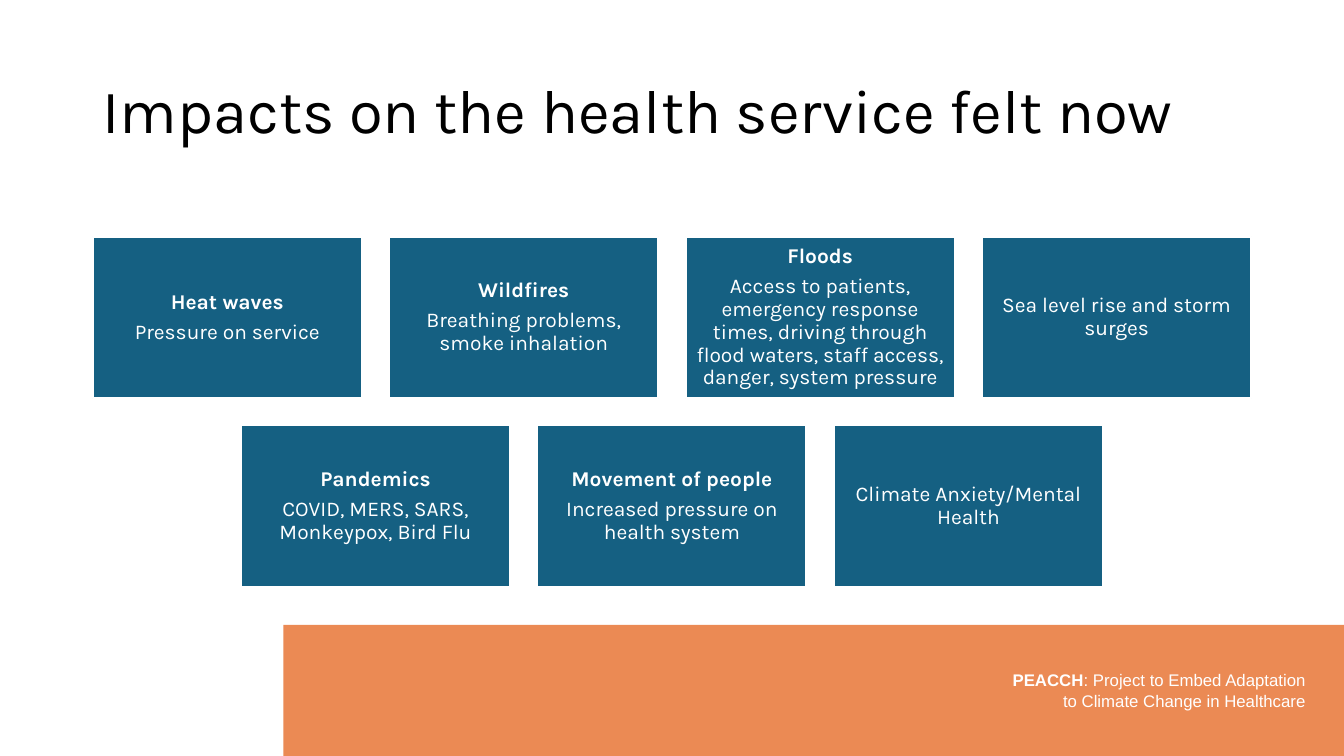
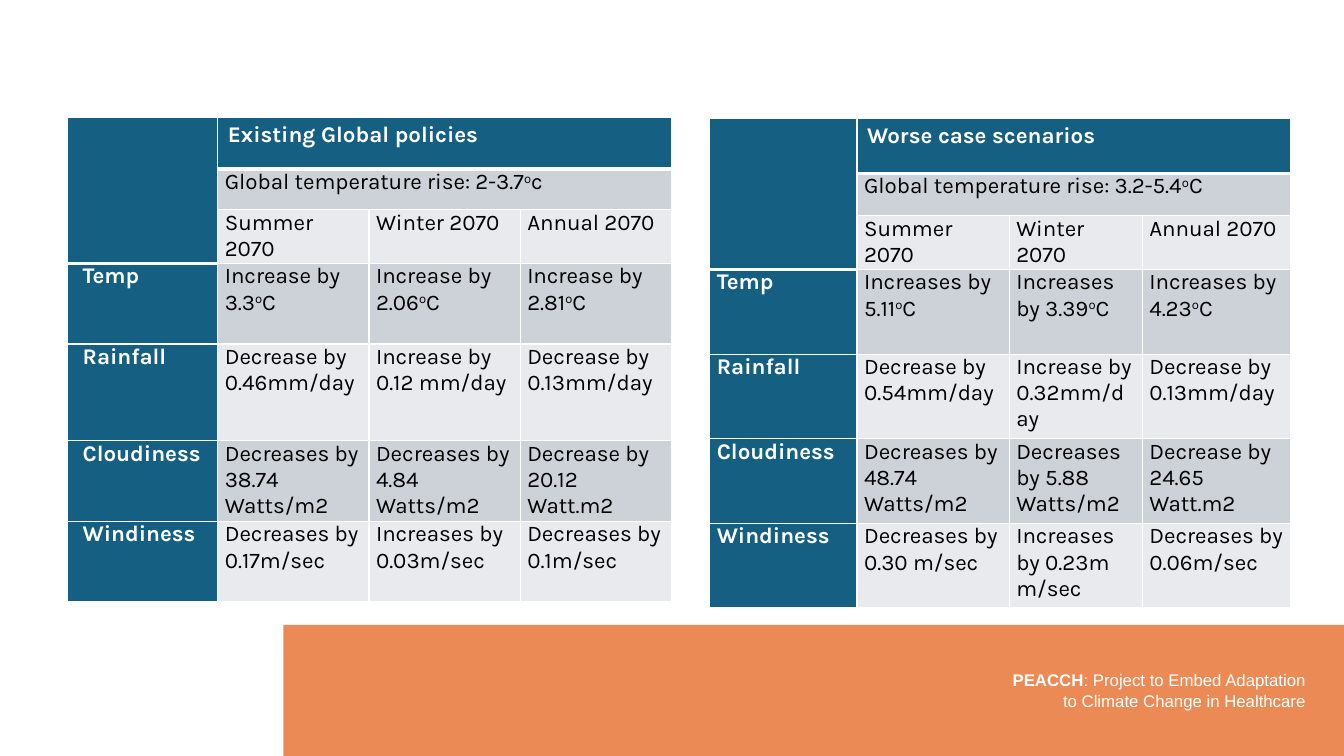
from lxml import etree
from pptx import Presentation
from pptx import util as u
from pptx.dml.color import RGBColor
from pptx.enum import shapes, text
from pptx.oxml.ns import qn

PX = 9144  # EMU per px, 100 px to the inch
WIDE, HIGH = 1333, 750
BLUE, ORANGE, WHITE, BLACK = "156082", "EB8A54", "FFFFFF", "000000"
BANDS = ["CCD2D8", "E8EAED"]
SANS, KARLA = "Arial", "Karla"
LEFT, MID, RIGHT = text.PP_ALIGN.LEFT, text.PP_ALIGN.CENTER, text.PP_ALIGN.RIGHT

CARD_W, CARD_H, CARD_TOP, GAP = 267, 160, 235, 27
CARDS = [
    [("Heat waves", "Pressure on service"),
     ("Wildfires", "Breathing problems, smoke inhalation"),
     ("Floods", "Access to patients, emergency response times, driving "
                "through flood waters, staff access, danger, system pressure"),
     ("", "Sea level rise and storm surges")],
    [("Pandemics", "COVID, MERS, SARS, Monkeypox, Bird Flu"),
     ("Movement of people", "Increased pressure on health system"),
     ("", "Climate Anxiety/Mental Health")],
]

# A degree sign in the table texts is set as a raised "o"
TERMS = ["Summer 2070", "Winter 2070", "Annual 2070"]
POLICY = [
    ["", "Existing Global policies", "", ""],
    ["", "Global temperature rise: 2-3.7°c", "", ""],
    ["", *TERMS],
    ["Temp", "Increase by 3.3°C", "Increase by 2.06°C", "Increase by 2.81°C"],
    ["Rainfall", "Decrease by 0.46mm/day", "Increase by 0.12 mm/day", "Decrease by 0.13mm/day"],
    ["Cloudiness", "Decreases by 38.74 Watts/m2", "Decreases by 4.84 Watts/m2",
     "Decrease by 20.12 Watt.m2"],
    ["Windiness", "Decreases by 0.17m/sec", "Increases by 0.03m/sec", "Decreases by 0.1m/sec"],
]
WORSE = [
    ["", "Worse case scenarios", "", ""],
    ["", "Global temperature rise: 3.2-5.4°C", "", ""],
    ["", *TERMS],
    ["Temp", "Increases by 5.11°C", "Increases by 3.39°C", "Increases by 4.23°C"],
    ["Rainfall", "Decrease by 0.54mm/day", "Increase by 0.32mm/day", "Decrease by 0.13mm/day"],
    ["Cloudiness", "Decreases by 48.74 Watts/m2", "Decreases by 5.88 Watts/m2",
     "Decrease by 24.65 Watt.m2"],
    ["Windiness", "Decreases by 0.30 m/sec", "Increases by 0.23m m/sec", "Decreases by 0.06m/sec"],
]


def px(*nums):
    return [u.Emu(round(n * PX)) for n in nums]


def color(code):
    return RGBColor.from_string(code)


def paint(item, code):
    item.fill.solid()
    item.fill.fore_color.rgb = color(code)


def add_run(para, words, size, ink, bold=False, face=KARLA, lift=False):
    run = para.add_run()
    run.text = words
    font = run.font
    font.size, font.name, font.bold = u.Pt(size), face, bold
    font.color.rgb = color(ink)
    if lift:
        run._r.get_or_add_rPr().set("baseline", "30000")


def set_frame(frame, inset=None, anchor=text.MSO_ANCHOR.TOP):
    frame.word_wrap = True
    frame.vertical_anchor = anchor
    if inset is not None:
        (frame.margin_left, frame.margin_top,
         frame.margin_right, frame.margin_bottom) = px(*[inset] * 4)


def add_rect(slide, box, fill):
    rect = slide.shapes.add_shape(shapes.MSO_SHAPE.RECTANGLE, *px(*box))
    rect.shadow.inherit = False
    paint(rect, fill)
    rect.line.fill.background()
    return rect


def add_text(slide, box, align, anchor=text.MSO_ANCHOR.TOP):
    frame = slide.shapes.add_textbox(*px(*box)).text_frame
    set_frame(frame, anchor=anchor)
    para = frame.paragraphs[0]
    para.alignment = align
    return para


def add_page(deck):
    """Blank slide with the shared footer band."""
    slide = deck.slides.add_slide(deck.slide_layouts[6])
    add_rect(slide, (281, 620, WIDE - 281, HIGH - 620), ORANGE)
    para = add_text(slide, (986, 660, 319, 50), RIGHT)
    add_run(para, "PEACCH", 12, WHITE, True, SANS)
    add_run(para, ": Project to Embed Adaptation to Climate Change in Healthcare",
            12, WHITE, face=SANS)
    return slide


def add_title(slide, words):
    para = add_text(slide, (92, 40, 1150, 145), LEFT, text.MSO_ANCHOR.MIDDLE)
    para.line_spacing = 0.9
    add_run(para, words, 44, BLACK)


def add_card(slide, left, top, head, body):
    card = add_rect(slide, (left, top, CARD_W, CARD_H), BLUE)
    card.line.color.rgb = color(WHITE)
    card.line.width = u.Pt(1.5)
    frame = card.text_frame
    set_frame(frame, 6, text.MSO_ANCHOR.MIDDLE)
    lines = [(words, bold) for words, bold in ((head, True), (body, False)) if words]
    for i, (words, bold) in enumerate(lines):
        para = frame.add_paragraph() if i else frame.paragraphs[0]
        para.alignment, para.line_spacing = MID, 0.9
        para.space_after = u.Pt(5.25)
        add_run(para, words, 15, WHITE, bold)


def add_cards(slide):
    """Rows of equal cards, each row centred on the slide."""
    for r, row in enumerate(CARDS):
        span = len(row) * (CARD_W + GAP) - GAP
        for c, (head, body) in enumerate(row):
            add_card(slide, (WIDE - span) // 2 + c * (CARD_W + GAP),
                     CARD_TOP + r * (CARD_H + GAP), head, body)


def set_edges(cell, base):
    """White cell borders; base is the bottom width in points."""
    props = cell._tc.get_or_add_tcPr()
    for i, (side, width) in enumerate(zip("LRTB", (1, 1, 1, base))):
        edge = etree.Element(qn(f"a:ln{side}"), w=str(u.Pt(width)))
        fill = etree.SubElement(edge, qn("a:solidFill"))
        etree.SubElement(fill, qn("a:srgbClr"), val=WHITE)
        props.insert(i, edge)


def fill_cell(cell, words, r, c, indent):
    label, banner = c == 0, r == 0
    dark = label or banner
    paint(cell, BLUE if dark else BANDS[(r + 1) % 2])
    set_edges(cell, 3 if banner or (label and r < 3) else 1)
    if not banner:
        side = 7 + (indent if label else 0)
        (cell.margin_left, cell.margin_right,
         cell.margin_top, cell.margin_bottom) = px(side, 7, 0, 0)
    para = cell.text_frame.paragraphs[0]
    para.font.size = u.Pt(16)
    ink = WHITE if dark else BLACK
    start, degree, unit = words.partition("°")
    for part, lift in ((start, False), (degree and "o", True), (unit, False)):
        if part:
            add_run(para, part, 16, ink, dark, lift=lift)


def add_grid(slide, left, top, cols, rows, data, indent=0):
    box = px(left, top, sum(cols), sum(rows))
    grid = slide.shapes.add_table(len(rows), len(cols), *box).table
    grid.first_row = grid.horz_banding = False
    for col, width in zip(grid.columns, px(*cols)):
        col.width = width
    for row, height in zip(grid.rows, px(*rows)):
        row.height = height
    for r, line in enumerate(data):
        for c, words in enumerate(line):
            fill_cell(grid.cell(r, c), words, r, c, indent)
    # Corner, banner and temperature line span several cells
    for first, last in (((0, 0), (2, 0)), ((0, 1), (0, 3)), ((1, 1), (1, 3))):
        grid.cell(*first).merge(grid.cell(*last))


def main():
    deck = Presentation()
    deck.slide_width, deck.slide_height = px(WIDE, HIGH)

    # Impacts
    slide = add_page(deck)
    add_title(slide, "Impacts on the health service felt now")
    add_cards(slide)

    # Climate scenarios
    slide = add_page(deck)
    add_grid(slide, 67, 116, [149, 150, 150, 150],
             [52, 40, 48, 80, 96, 80, 80], POLICY, indent=8)
    add_grid(slide, 704, 117, [146, 151, 132, 147],
             [55, 42, 42, 84, 84, 84, 84], WORSE)

    deck.save("out.pptx")


if __name__ == "__main__":
    main()
